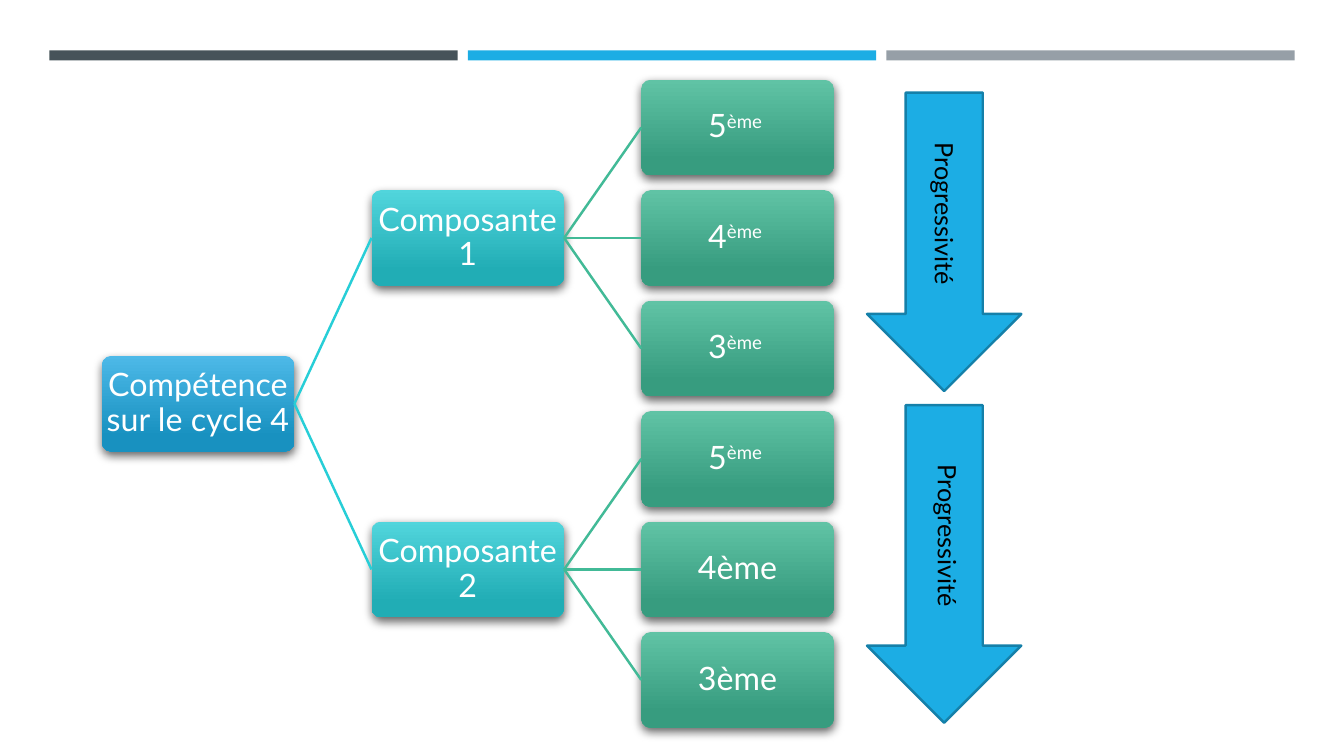
"""Build a slide showing a skill tree for cycle 4 with two progress arrows."""
from dataclasses import dataclass

from lxml import etree
from pptx import Presentation
from pptx import util as u
from pptx.dml.color import RGBColor
from pptx.enum import shapes, text
from pptx.oxml import ns

COLORS = {
    "dark": "465359", "blue": "1CADE4", "grey": "969FA7", "arrow_edge": "1580A9",
    "white": "FFFFFF", "black": "000000", "teal_line": "27CED7", "green_line": "42BA97",
}
LEVEL_GRADIENTS = [("4DB9E8", "1891C0"), ("51D5DC", "21ADB5"), ("60C3A5", "379C7F")]
LEVEL_LINES = ["", "teal_line", "green_line"]
FONT = "Lato"
BOX_WIDTH, BOX_HEIGHT = 1.91, 0.95
LEFT, TOP = 1.01, 0.79
COLUMN_STEP = (6.36 - LEFT) / 2
ROW_STEP = (6.27 - TOP) / 5


@dataclass
class Node:
    """A box of the tree, placed by level and row."""
    label: str
    level: int
    row: float
    superscript: str = ""
    children: tuple = ()


@dataclass
class Bar:
    """A coloured strip at the top of the page."""
    left: float
    color: str


@dataclass
class Arrow:
    """A downward arrow and the position of its turned caption."""
    top: float
    height: float
    caption_left: float
    caption_top: float


BARS = [Bar(0.49, "dark"), Bar(4.64, "blue"), Bar(8.79, "grey")]
ARROWS = [Arrow(0.92, 2.96, 8.44, 2.05), Arrow(4.02, 3.15, 8.47, 5.24)]
TREE = Node("Compétence sur le cycle 4", 0, 2.5, children=(
    Node("Composante 1", 1, 1, children=(
        Node("5", 2, 0, "ème "), Node("4", 2, 1, "ème "), Node("3", 2, 2, "ème "))),
    Node("Composante 2", 1, 4, children=(
        Node("5", 2, 3, "ème "), Node("4ème", 2, 4), Node("3ème", 2, 5))),
))


def rgb(name: str) -> RGBColor:
    """Return the named colour."""
    return RGBColor.from_string(COLORS[name])


def add_text(para, content: str, *, size: float, color: str, baseline: int = 0) -> None:
    """Add a formatted span to a paragraph."""
    span = para.add_run()
    span.text = content
    span.font.name = FONT
    span.font.size = u.Pt(size)
    span.font.color.rgb = rgb(color)
    if baseline:
        span.font._element.set("baseline", str(baseline * 1000))


def add_shape(page, kind, left: float, top: float, width: float, height: float):
    """Add a preset shape without its theme shadow."""
    box = page.shapes.add_shape(kind, *map(u.Inches, (left, top, width, height)))
    box.shadow.inherit = False
    return box


def add_shadow(box) -> None:
    """Give a box a soft shadow below it."""
    effects = box._element.spPr.find(ns.qn("a:effectLst"))
    shadow = etree.SubElement(effects, ns.qn("a:outerShdw"), blurRad=str(u.Pt(7)),
                              dist=str(u.Pt(3)), dir=str(84 * 60000), rotWithShape="0")
    color = etree.SubElement(shadow, ns.qn("a:srgbClr"), val=COLORS["black"])
    etree.SubElement(color, ns.qn("a:alpha"), val="60000")


def draw_bar(page, bar: Bar) -> None:
    """Draw a strip."""
    strip = add_shape(page, shapes.MSO_SHAPE.RECTANGLE, bar.left, 0.5, 4.05, 0.1)
    strip.fill.solid()
    strip.fill.fore_color.rgb = rgb(bar.color)
    strip.line.fill.background()


def draw_box(page, node: Node):
    """Draw the box of one node with its label."""
    box = add_shape(page, shapes.MSO_SHAPE.ROUNDED_RECTANGLE,
                    LEFT + node.level * COLUMN_STEP, TOP + node.row * ROW_STEP,
                    BOX_WIDTH, BOX_HEIGHT)
    box.adjustments[0] = 0.1
    box.line.fill.background()
    box.fill.gradient()
    box.fill.gradient_angle = 270
    for stop, position, color in zip(box.fill.gradient_stops, (0, 0.84),
                                     LEVEL_GRADIENTS[node.level]):
        stop.position = position
        stop.color.rgb = RGBColor.from_string(color)
    add_shadow(box)
    frame = box.text_frame
    frame.word_wrap = True
    frame.vertical_anchor = text.MSO_ANCHOR.MIDDLE
    frame.margin_left = frame.margin_right = u.Inches(0.01)
    frame.margin_top = frame.margin_bottom = u.Inches(0.02)
    para = frame.paragraphs[0]
    para.alignment = text.PP_ALIGN.CENTER
    para.line_spacing = 0.9
    add_text(para, node.label, size=23, color="white")
    if node.superscript:
        add_text(para, node.superscript, size=23, color="white", baseline=30)
    return box


def draw_link(page, parent, child, color: str) -> None:
    """Join the right side of a parent to the left side of a child."""
    link = page.shapes.add_connector(shapes.MSO_CONNECTOR.STRAIGHT, 0, 0, 0, 0)
    link.begin_connect(parent, 3)
    link.end_connect(child, 1)
    link.line.color.rgb = rgb(color)
    link.line.width = u.Pt(1.75)
    etree.SubElement(link._element.spPr, ns.qn("a:effectLst"))


def draw_tree(page, node: Node):
    """Draw a node, its descendants and their links."""
    box = draw_box(page, node)
    for child in node.children:
        draw_link(page, box, draw_tree(page, child), LEVEL_LINES[child.level])
    return box


def draw_arrow(page, arrow: Arrow) -> None:
    """Draw a progress arrow and its caption."""
    shape = add_shape(page, shapes.MSO_SHAPE.DOWN_ARROW, 8.6, arrow.top, 1.53, arrow.height)
    shape.fill.solid()
    shape.fill.fore_color.rgb = rgb("blue")
    shape.line.color.rgb = rgb("arrow_edge")
    shape.line.width = u.Pt(1.75)
    caption = page.shapes.add_textbox(u.Inches(arrow.caption_left), u.Inches(arrow.caption_top),
                                      u.Inches(1.86), u.Inches(0.4))
    caption.rotation = 90
    caption.text_frame.word_wrap = True
    add_text(caption.text_frame.paragraphs[0], "Progressivité", size=18, color="black")


def main() -> None:
    """Build and save the deck."""
    deck = Presentation()
    deck.slide_width, deck.slide_height = u.Inches(13.33), u.Inches(7.5)
    page = deck.slides.add_slide(deck.slide_layouts[6])
    for bar in BARS:
        draw_bar(page, bar)
    draw_tree(page, TREE)
    for arrow in ARROWS:
        draw_arrow(page, arrow)
    deck.save("out.pptx")


if __name__ == "__main__":
    main()
